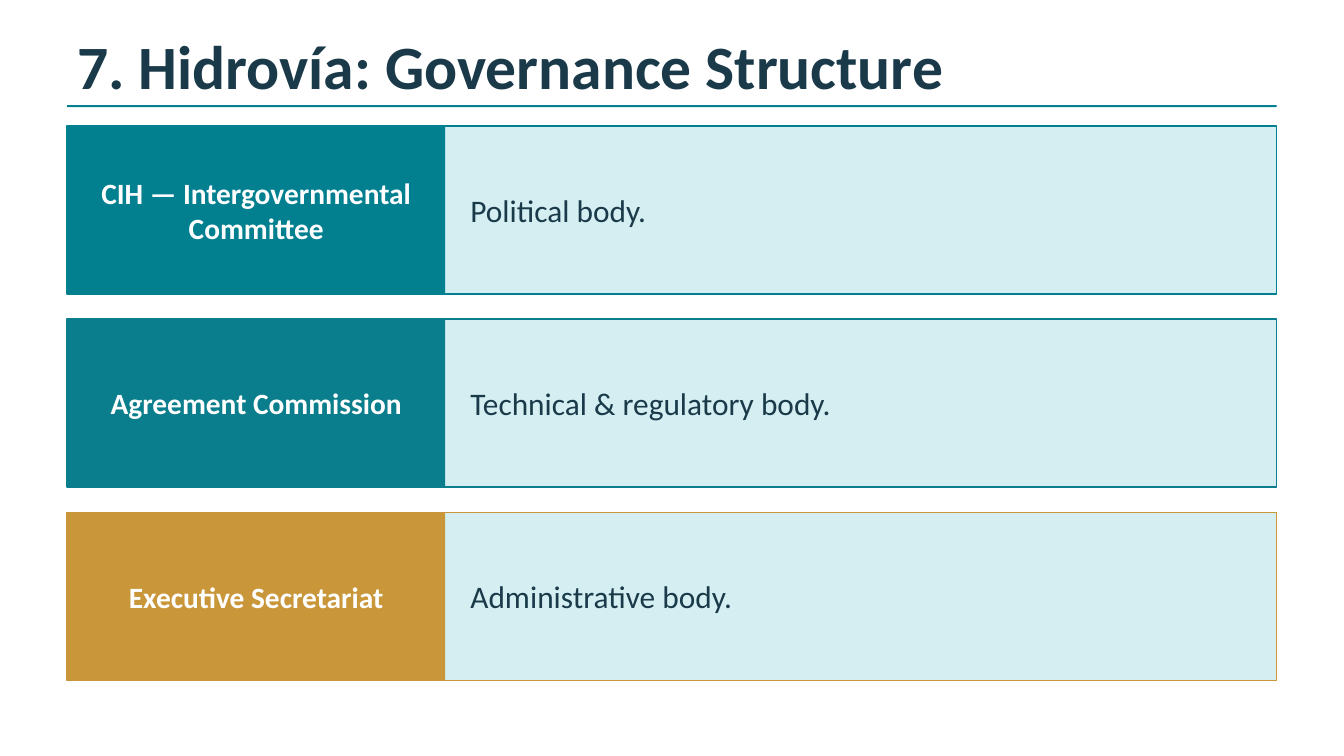
from dataclasses import dataclass

from pptx import Presentation
from pptx.dml.color import RGBColor
from pptx.enum.shapes import MSO_SHAPE
from pptx.enum.text import MSO_ANCHOR, PP_ALIGN
from pptx.util import Inches, Pt

RECTANGLE = MSO_SHAPE.RECTANGLE
MIDDLE = MSO_ANCHOR.MIDDLE
LEFT, CENTER = PP_ALIGN.LEFT, PP_ALIGN.CENTER

# Square grid: 160 columns by 90 rows, 12 units to the inch
UNIT = Inches(1) / 12
COLUMNS, ROWS = 160, 90
MARGIN = 8
CONTENT_WIDTH = COLUMNS - 2 * MARGIN
FIRST_BAND, BAND_HEIGHT, BAND_STEP = 15, 20, 23
LABEL_WIDTH = 45
BAND_PADDING = 3


@dataclass(frozen=True)
class Theme:
    font: str = "Calibri"
    ink: str = "1A3A4A"
    white: str = "FFFFFF"
    pale: str = "D4EEF2"
    teal: str = "028090"
    deep_teal: str = "0A7E8C"
    gold: str = "C9973A"
    title_size: float = 44
    label_size: float = 21
    body_size: float = 22.4
    outline: float = 1


THEME = Theme()

TITLE = "7. Hidrovía: Governance Structure"
BODIES = [
    ("CIH — Intergovernmental Committee", "Political body.", THEME.teal),
    ("Agreement Commission", "Technical & regulatory body.", THEME.deep_teal),
    ("Executive Secretariat", "Administrative body.", THEME.gold),
]


def set_values(target, values):
    for name, value in values.items():
        setattr(target, name, value)


def grid_box(*units):
    return [round(unit * UNIT) for unit in units]


def add_rectangle(slide, box, fill, line=None):
    shape = slide.shapes.add_shape(RECTANGLE, *grid_box(*box))
    shape.shadow.inherit = False
    shape.fill.solid()
    shape.fill.fore_color.rgb = RGBColor.from_string(fill)
    if line:
        shape.line.color.rgb = RGBColor.from_string(line)
        shape.line.width = Pt(THEME.outline)
    else:
        shape.line.fill.background()
    return shape


def write_text(shape, text, size, color, bold=False, align=LEFT, padding=None):
    frame = shape.text_frame
    set_values(frame, {"word_wrap": True, "vertical_anchor": MIDDLE})
    if padding is not None:
        sides = ("margin_left", "margin_top", "margin_right", "margin_bottom")
        set_values(frame, dict.fromkeys(sides, round(padding * UNIT)))
    paragraph = frame.paragraphs[0]
    paragraph.alignment = align
    run = paragraph.add_run()
    run.text = text
    set_values(run.font, {"name": THEME.font, "size": Pt(size), "bold": bold})
    run.font.color.rgb = RGBColor.from_string(color)


def add_title(slide):
    box = slide.shapes.add_textbox(*grid_box(MARGIN, 3.75, CONTENT_WIDTH, 8))
    write_text(box, TITLE, THEME.title_size, THEME.ink, bold=True)
    add_rectangle(slide, (MARGIN, 12.5, CONTENT_WIDTH, 0.25), THEME.teal)


def add_band(slide, top, label, description, color):
    # Outlined panel behind the whole row
    add_rectangle(slide, (MARGIN, top, CONTENT_WIDTH, BAND_HEIGHT), THEME.pale, color)

    # Coloured name of the body
    name = add_rectangle(slide, (MARGIN, top, LABEL_WIDTH, BAND_HEIGHT), color)
    write_text(name, label, THEME.label_size, THEME.white, True, CENTER, BAND_PADDING)

    # Its role
    role = slide.shapes.add_textbox(*grid_box(
        MARGIN + LABEL_WIDTH, top, CONTENT_WIDTH - LABEL_WIDTH, BAND_HEIGHT))
    write_text(role, description, THEME.body_size, THEME.ink, padding=BAND_PADDING)


def main():
    presentation = Presentation()
    presentation.slide_width, presentation.slide_height = grid_box(COLUMNS, ROWS)
    slide = presentation.slides.add_slide(presentation.slide_layouts[6])
    slide.background.fill.solid()
    slide.background.fill.fore_color.rgb = RGBColor.from_string(THEME.white)

    add_title(slide)
    for index, body in enumerate(BODIES):
        add_band(slide, FIRST_BAND + index * BAND_STEP, *body)

    presentation.save("out.pptx")


if __name__ == "__main__":
    main()
